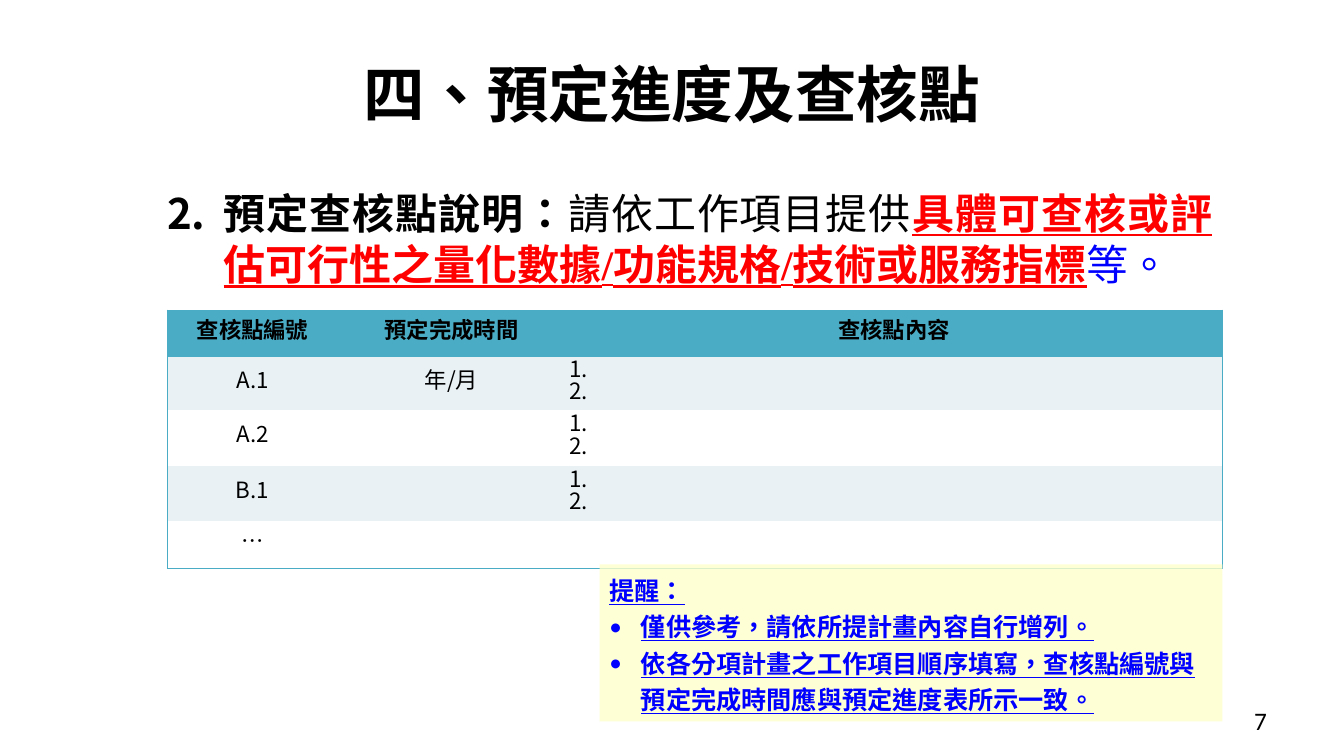
import pptx
import pptx.util
import pptx.dml.color
import pptx.enum.shapes
import pptx.enum.text
import pptx.oxml
import pptx.oxml.ns
import lxml.etree

Cm = pptx.util.Cm
Pt = pptx.util.Pt
qn = pptx.oxml.ns.qn
ALIGN = pptx.enum.text.PP_ALIGN
ANCHOR = pptx.enum.text.MSO_ANCHOR
CJK = "Noto Sans CJK SC"
SERIF = "Times New Roman"
TEAL = "4BACC6"
BLUE = "0000FF"


def color(hex_string):
    return pptx.dml.color.RGBColor.from_string(hex_string)


def add_text(paragraph, text, size=16, font=SERIF, ink="000000", bold=False,
             underline=False, align=ALIGN.LEFT, spacing=None):
    paragraph.alignment = align
    if spacing:
        paragraph.line_spacing = spacing
    run = paragraph.add_run()
    run.text = text
    run.font.size = Pt(size)
    run.font.name = font
    run.font.bold = bold
    run.font.underline = underline
    run.font.color.rgb = color(ink)
    properties = run._r.get_or_add_rPr()
    properties.set("lang", "zh-TW")
    east_asian = lxml.etree.SubElement(properties, qn("a:ea"))
    east_asian.set("typeface", CJK)


presentation = pptx.Presentation()
presentation.slide_width = Cm(33.87)
presentation.slide_height = Cm(19.05)
slide = presentation.slides.add_slide(presentation.slide_layouts[1])

# Title
title = slide.shapes.title
title.left, title.top, title.width, title.height = Cm(1.7), Cm(0.76), Cm(30.48), Cm(3.18)
title.text_frame.vertical_anchor = ANCHOR.MIDDLE
add_text(title.text_frame.paragraphs[0], "四、預定進度及查核點", size=44, bold=True,
         align=ALIGN.CENTER)

# Numbered instruction
body = slide.placeholders[1]
body.left, body.top, body.width, body.height = Cm(3.96), Cm(4.57), Cm(26.85), Cm(11.61)
body.text_frame.auto_size = pptx.enum.text.MSO_AUTO_SIZE.NONE
instruction = body.text_frame.paragraphs[0]
instruction.space_before = Pt(7)
for text, ink, bold, underline in [
    ("預定查核點說明：", "000000", True, False),
    ("請依工作項目提供", "000000", False, False),
    ("具體可查核或評估可行性之量化數據/功能規格/技術或服務指標", "FF0000", True, True),
    ("等。", BLUE, False, False),
]:
    add_text(instruction, text, size=30, ink=ink, bold=bold, underline=underline,
             align=ALIGN.JUSTIFY, spacing=Pt(36.5))

# Checkpoint table
rows = [
    ["查核點編號", "預定完成時間", "查核點內容"],
    ["A.1", "年/月", "1.\n2."],
    ["A.2", "", "1.\n2."],
    ["B.1", "", "1.\n2."],
    ["…", "", ""],
]
column_widths = [4.29, 5.74, 16.56]
row_heights = [1.17, 1.35, 1.4, 1.4, 1.19]
table = slide.shapes.add_table(len(rows), len(column_widths), Cm(4.22), Cm(7.82),
                               Cm(sum(column_widths)), Cm(sum(row_heights))).table
# Plain style without grid lines
table._tbl.tblPr.find(qn("a:tableStyleId")).text = "{2D5ABB26-0587-4C30-8999-92F81FD0307C}"
for column, width in zip(table.columns, column_widths):
    column.width = Cm(width)
for row_index, row in enumerate(rows):
    table.rows[row_index].height = Cm(row_heights[row_index])
    is_header = row_index == 0
    for column_index, text in enumerate(row):
        cell = table.cell(row_index, column_index)
        cell.vertical_anchor = ANCHOR.MIDDLE
        cell.margin_left = cell.margin_right = Cm(0.1)
        cell.margin_top = cell.margin_bottom = 0
        cell.fill.solid()
        band = "E9F1F5" if row_index % 2 else "FFFFFF"
        cell.fill.fore_color.rgb = color(TEAL if is_header else band)
        is_list = column_index == 2 and not is_header
        for line_index, line in enumerate(text.split("\n") if text else []):
            frame = cell.text_frame
            paragraph = frame.add_paragraph() if line_index else frame.paragraphs[0]
            add_text(paragraph, line, font=CJK, bold=is_header, spacing=Pt(16),
                     align=ALIGN.LEFT if is_list else ALIGN.CENTER)
        # Outer border only
        sides = [
            ("a:lnL", column_index == 0),
            ("a:lnR", column_index == len(column_widths) - 1),
            ("a:lnT", is_header),
            ("a:lnB", row_index == len(rows) - 1),
        ]
        outer_sides = [tag for tag, is_outer in sides if is_outer]
        for position, tag in enumerate(outer_sides):
            border = lxml.etree.Element(qn(tag), w=str(Pt(1)))
            fill = lxml.etree.SubElement(border, qn("a:solidFill"))
            lxml.etree.SubElement(fill, qn("a:srgbClr"), val=TEAL)
            cell._tc.get_or_add_tcPr().insert(position, border)

# Reminder box
reminder = slide.shapes.add_shape(pptx.enum.shapes.MSO_SHAPE.RECTANGLE,
                                  Cm(15.11), Cm(14.22), Cm(15.7), Cm(3.96))
reminder.shadow.inherit = False
reminder.line.fill.background()
reminder.fill.solid()
reminder.fill.fore_color.rgb = color("FFFFCC")
reminder_color = reminder._element.spPr.find(qn("a:solidFill")).find(qn("a:srgbClr"))
lxml.etree.SubElement(reminder_color, qn("a:alpha"), val="80000")
reminder_frame = reminder.text_frame
reminder_frame.word_wrap = True
reminder_frame.vertical_anchor = ANCHOR.TOP
for index, text in enumerate([
    "提醒：",
    "僅供參考，請依所提計畫內容自行增列。",
    "依各分項計畫之工作項目順序填寫，查核點編號與預定完成時間應與預定進度表所示一致。",
]):
    paragraph = reminder_frame.add_paragraph() if index else reminder_frame.paragraphs[0]
    add_text(paragraph, text, size=18, ink=BLUE, bold=True, underline=True, spacing=Pt(26))

# Numbering and bullets with hanging indents
number = ("a:buAutoNum", {"type": "arabicPeriod", "startAt": "2"}, CJK, Cm(1.42))
bullet = ("a:buChar", {"char": "•"}, "Calibri", Cm(0.79))
marked = [(instruction, number)] + [(item, bullet) for item in reminder_frame.paragraphs[1:]]
for paragraph, (tag, attributes, font, indent) in marked:
    properties = paragraph._p.get_or_add_pPr()
    properties.set("marL", str(indent))
    properties.set("indent", str(-indent))
    lxml.etree.SubElement(properties, qn("a:buFont"), typeface=font)
    lxml.etree.SubElement(properties, qn(tag), attributes)

# Page number
page_number = slide.shapes.add_textbox(Cm(24.28), Cm(17.65), Cm(7.9), Cm(1.02))
page_number.text_frame.word_wrap = True
page_number.text_frame.vertical_anchor = ANCHOR.MIDDLE
add_text(page_number.text_frame.paragraphs[0], "7", size=18, font="Calibri", align=ALIGN.RIGHT)

presentation.save("out.pptx")
